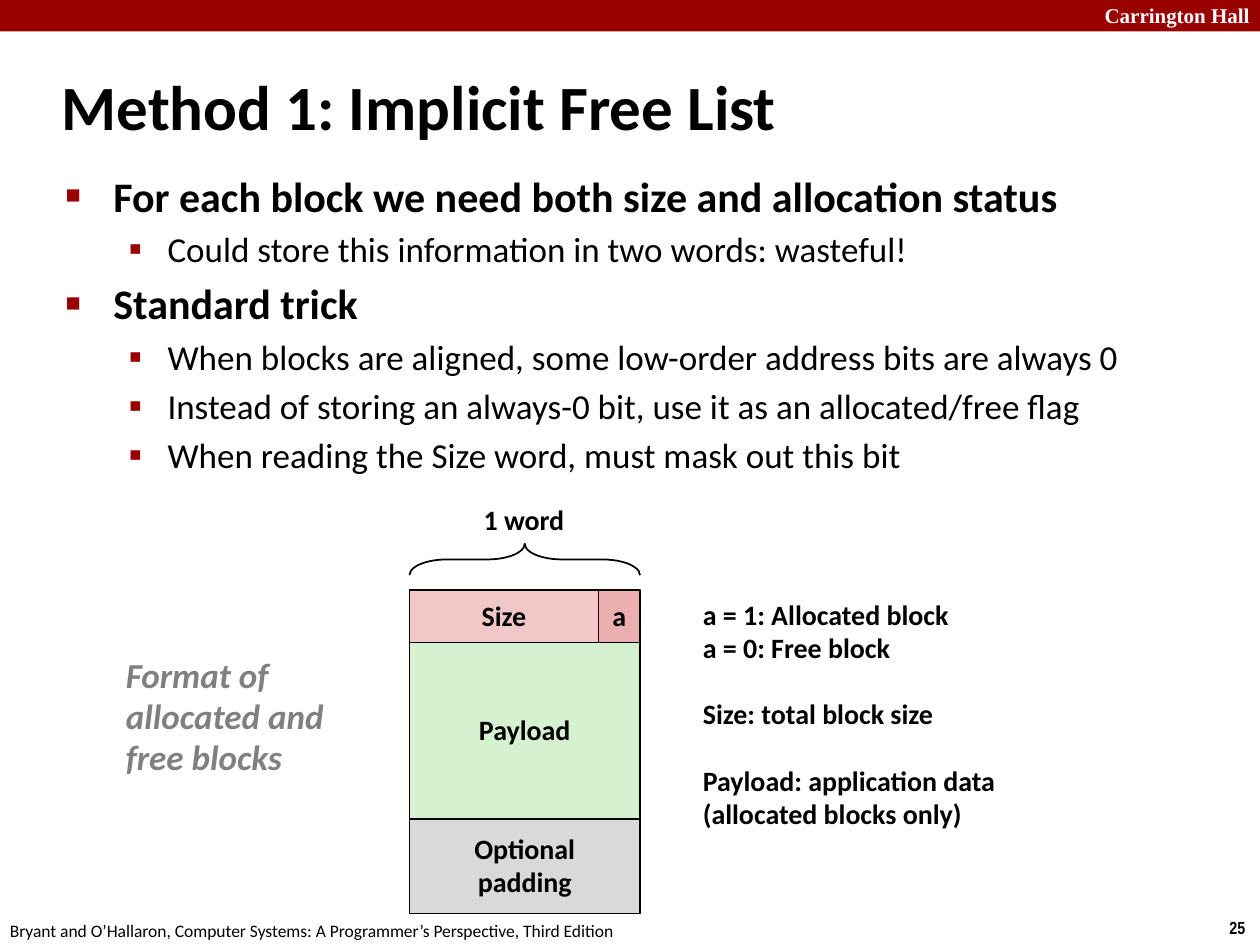
from lxml.etree import SubElement
from pptx import Presentation
from pptx.dml.color import RGBColor
from pptx.enum.shapes import MSO_SHAPE as Shape
from pptx.enum.text import MSO_ANCHOR as Anchor, MSO_AUTO_SIZE as AutoSize, PP_ALIGN as Align
from pptx.oxml.ns import qn
from pptx.util import Inches, Pt

COLORS = {
    "black": "000000", "white": "FFFFFF", "red": "990000", "gray": "808080",
    "size": "F1C7C7", "flag": "EBAFAF", "payload": "D5F1CF", "padding": "D9D9D9",
}

# Content
TITLE = "Method 1: Implicit Free List"
POINTS = [
    (0, "For each block we need both size and allocation status"),
    (1, "Could store this information in two words: wasteful!"),
    (0, "Standard trick"),
    (1, "When blocks are aligned, some low-order address bits are always 0"),
    (1, "Instead of storing an always-0 bit, use it as an allocated/free flag"),
    (1, "When reading the Size word, must mask out this bit"),
]
# Per level: size, bold, indent, hanging, bullet, bullet percent
LEVELS = [(24, True, 0.38, 0.38, "■", 60), (20, False, 0.81, 0.31, "▪", 110)]

# Rows of the block: height, then (lines, color, width) for each cell
BLOCK_LEFT, BLOCK_TOP, WORD_WIDTH, FLAG_WIDTH = 3.25, 4.68, 1.83, 0.33
BLOCK_ROWS = [
    (0.42, [(["Size"], "size", WORD_WIDTH - FLAG_WIDTH), (["a"], "flag", FLAG_WIDTH)]),
    (1.4, [(["Payload"], "payload", WORD_WIDTH)]),
    (0.75, [(["Optional", "padding"], "padding", WORD_WIDTH)]),
]
CAPTION = ["Format of", "allocated and", "free blocks"]
LEGEND = [
    ["a = 1: Allocated block", "a = 0: Free block"],
    ["Size: total block size"],
    ["Payload: application data", "(allocated blocks only)"],
]
LEGEND_GAP = 19
HEADER = "Carrington Hall"
FOOTER = "Bryant and O’Hallaron, Computer Systems: A Programmer’s Perspective, Third Edition"
PAGE = "25"


def rgb(name):
    return RGBColor.from_string(COLORS[name])


def write(frame, lines, size=16, font="Calibri", color="black", bold=True, italic=False,
          align=Align.LEFT, anchor=Anchor.TOP, wrap=False, spacing=None):
    """Fill a text frame with one paragraph per line."""
    frame.word_wrap = wrap
    frame.auto_size = AutoSize.NONE
    frame.vertical_anchor = anchor
    for i, line in enumerate(lines):
        paragraph = frame.paragraphs[0] if i == 0 else frame.add_paragraph()
        paragraph.alignment = align
        paragraph.line_spacing = spacing
        run = paragraph.add_run()
        run.text = line
        run.font.size, run.font.name = Pt(size), font
        run.font.bold, run.font.italic = bold, italic
        run.font.color.rgb = rgb(color)
    return frame


def add_label(slide, lines, left, top, width, height, **style):
    box = slide.shapes.add_textbox(*map(Inches, (left, top, width, height)))
    return write(box.text_frame, lines, **style)


def add_outline(slide, kind, left, top, width, height, fill=None, line="black"):
    shape = slide.shapes.add_shape(kind, *map(Inches, (left, top, width, height)))
    shape.shadow.inherit = False
    if fill:
        shape.fill.solid()
        shape.fill.fore_color.rgb = rgb(fill)
    else:
        shape.fill.background()
    if line:
        shape.line.color.rgb = rgb(line)
        shape.line.width = Pt(1)
    else:
        shape.line.fill.background()
    return shape


def place(shape, left, top, width, height):
    shape.left, shape.top, shape.width, shape.height = map(Inches, (left, top, width, height))


def set_bullet(paragraph, indent, hanging, char, percent):
    props = paragraph._p.get_or_add_pPr()
    props.set("marL", str(Inches(indent)))
    props.set("indent", str(-Inches(hanging)))
    color = SubElement(props, qn("a:buClr"))
    SubElement(color, qn("a:srgbClr"), val=COLORS["red"])
    SubElement(props, qn("a:buSzPct"), val=str(percent * 1000))
    SubElement(props, qn("a:buChar"), char=char)


def add_points(body):
    write(body.text_frame, [text for _, text in POINTS], wrap=True)
    for paragraph, (level, _) in zip(body.text_frame.paragraphs, POINTS):
        size, bold, *bullet = LEVELS[level]
        paragraph.level = level
        paragraph.runs[0].font.size = Pt(size)
        paragraph.runs[0].font.bold = bold
        set_bullet(paragraph, *bullet)


def add_block(slide):
    top = BLOCK_TOP
    for height, cells in BLOCK_ROWS:
        left = BLOCK_LEFT
        for lines, color, width in cells:
            cell = add_outline(slide, Shape.RECTANGLE, left, top, width, height, fill=color)
            write(cell.text_frame, lines, align=Align.CENTER, anchor=Anchor.MIDDLE, spacing=0.98)
            left += width
        top += height

    # Brace over the full word, turned to point up
    depth, center_x, center_y = 0.25, BLOCK_LEFT + WORD_WIDTH / 2, 4.44
    brace = add_outline(slide, Shape.RIGHT_BRACE, center_x - depth / 2,
                        center_y - WORD_WIDTH / 2, depth, WORD_WIDTH)
    brace.rotation = 270
    brace.adjustments[0] = 1.19
    brace.adjustments[1] = 0.5
    add_label(slide, ["1 word"], 3.74, 3.95, 0.85, 0.37, spacing=0.98)


def main():
    deck = Presentation()
    deck.slide_width, deck.slide_height = Inches(10), Inches(7.5)
    slide = deck.slides.add_slide(deck.slide_layouts[1])

    # Header band, footer and page number
    add_outline(slide, Shape.RECTANGLE, 0, 0, 10, 0.25, fill="red", line=None)
    add_label(slide, [HEADER], 8.64, -0.03, 1.33 + 0.1, 0.3, size=12,
              font="Times New Roman", color="white", align=Align.RIGHT).margin_right = Inches(0.15)
    add_label(slide, [PAGE], 9.66, 7.23, 0.34, 0.27, size=10, font="Arial Narrow")
    add_label(slide, [FOOTER], -0.02, 7.25, 5.08, 0.27, size=10, bold=False)

    # Title and points
    title, body = slide.placeholders
    place(title, 0.39, 0.52, 7.21, 0.63)
    write(title.text_frame, [TITLE], size=36, anchor=Anchor.MIDDLE, wrap=True)
    place(body, 0.42, 1.3, 9.03, 2.36)
    add_points(body)

    # Block diagram with caption and legend
    add_block(slide)
    add_label(slide, CAPTION, 0.9, 5.15, 1.78, 1.09, size=20, color="gray",
              italic=True, spacing=0.98)
    legend = add_label(slide, sum(LEGEND, []), 5.48, 4.71, 2.55, 2.22, spacing=0.98)
    first = 0
    for group in LEGEND[:-1]:
        first += len(group)
        legend.paragraphs[first].space_before = Pt(LEGEND_GAP)

    deck.save("out.pptx")


if __name__ == "__main__":
    main()
